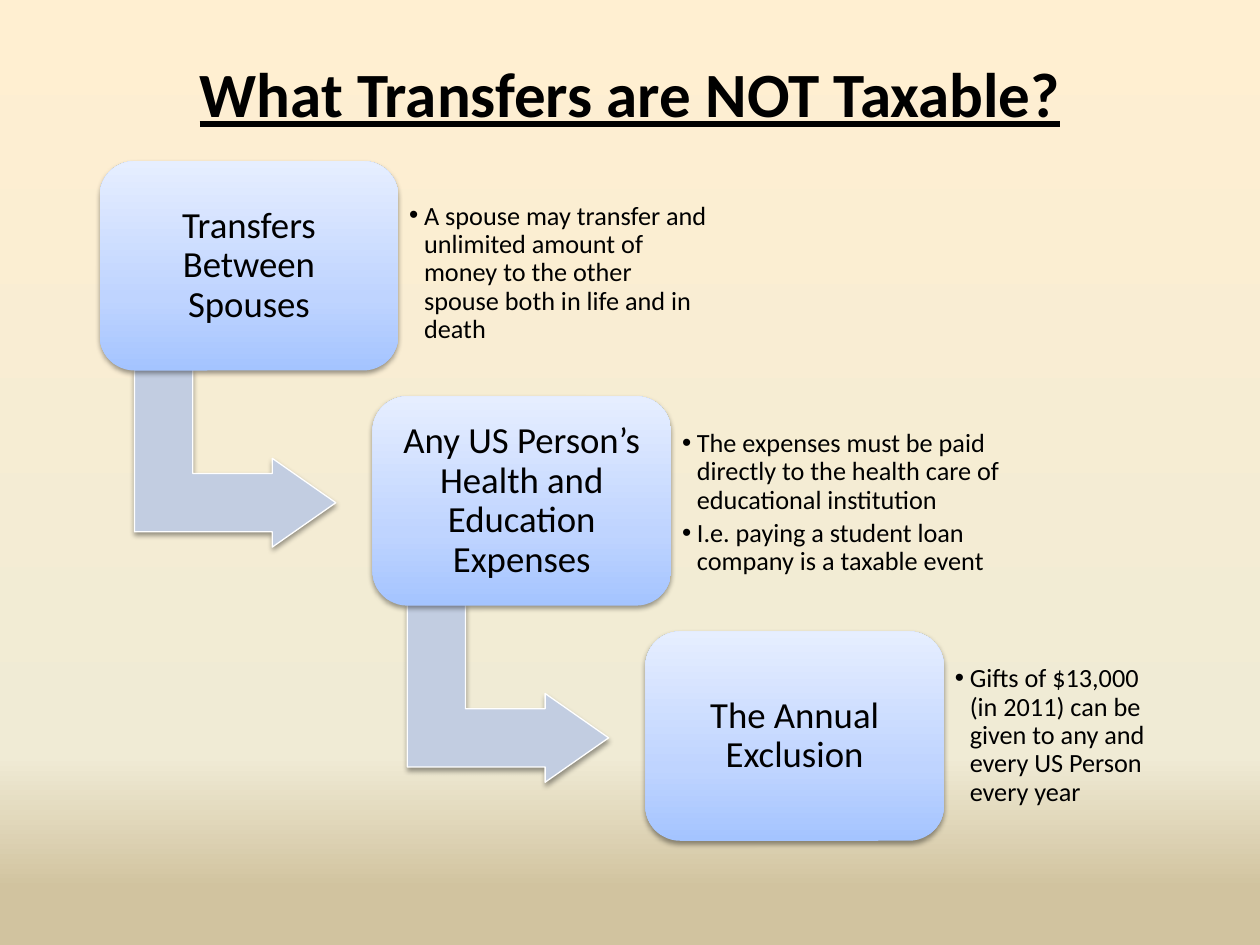
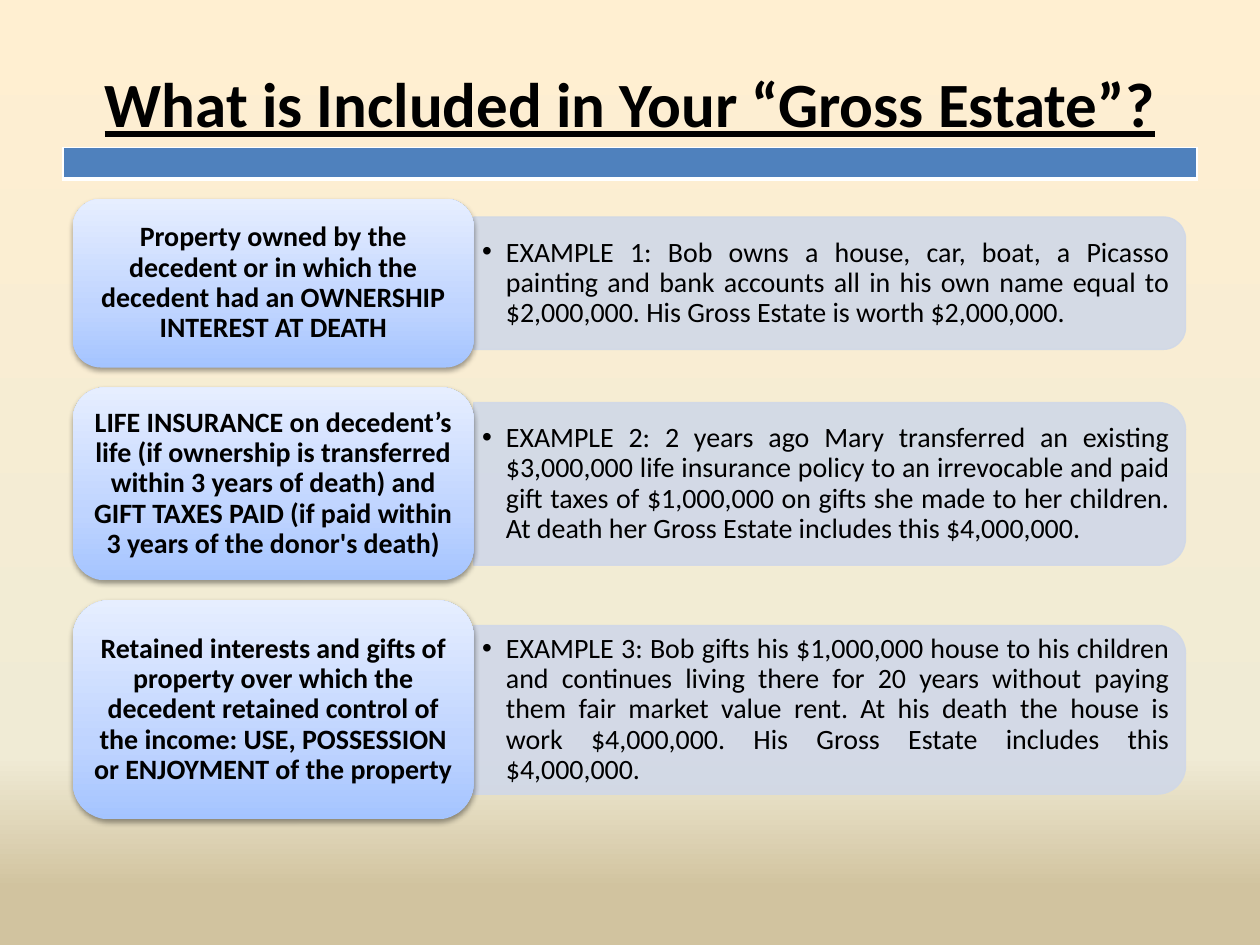
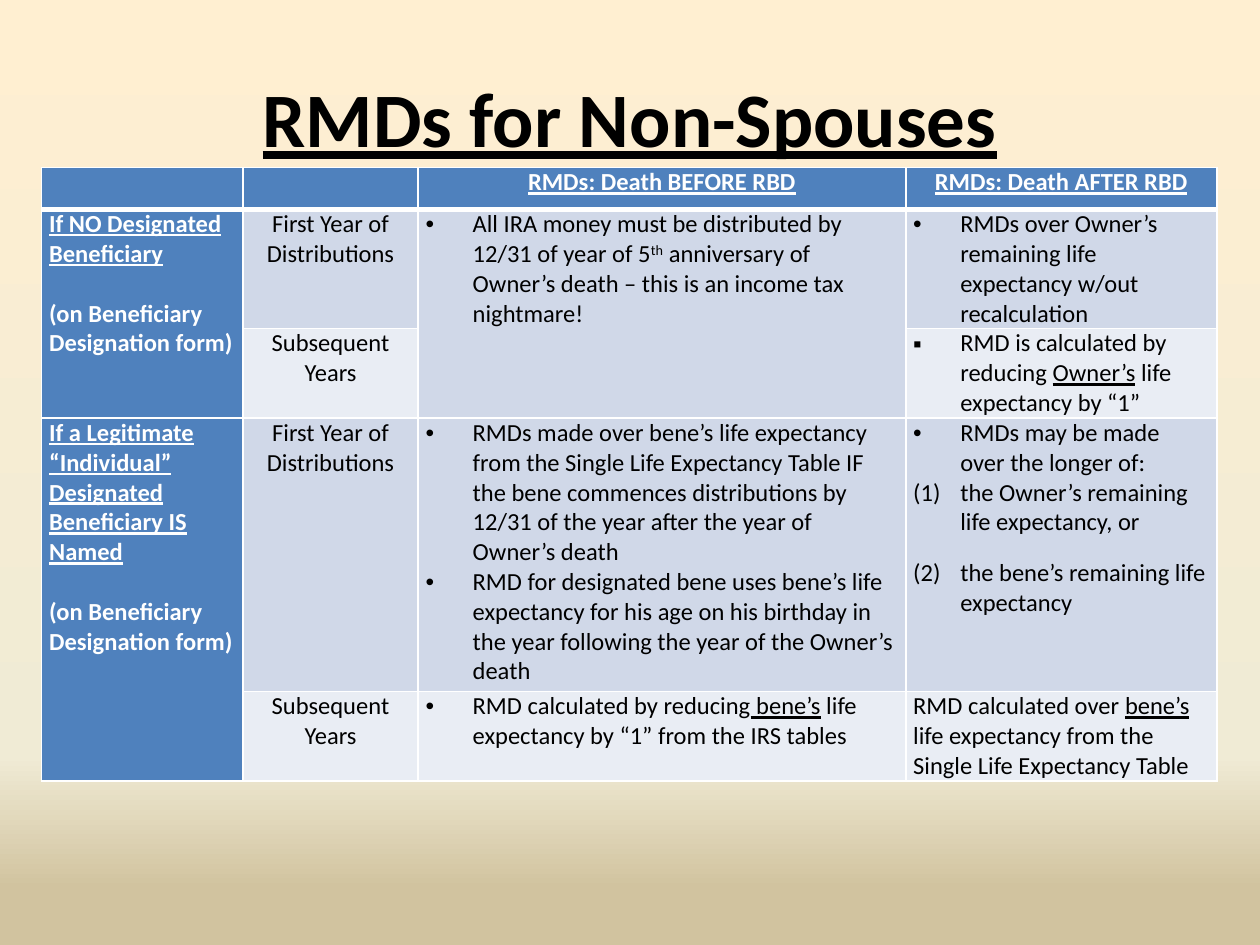
from lxml import etree
from pptx import Presentation
from pptx.dml.color import RGBColor
from pptx.enum.shapes import MSO_SHAPE
from pptx.enum.text import MSO_ANCHOR, MSO_AUTO_SIZE, PP_ALIGN
from pptx.oxml.ns import qn
from pptx.util import Cm, Pt

ROUND = MSO_SHAPE.ROUNDED_RECTANGLE
PANEL = MSO_SHAPE.ROUND_2_SAME_RECTANGLE
BENT = MSO_SHAPE.BENT_UP_ARROW
MIDDLE, TOP = MSO_ANCHOR.MIDDLE, MSO_ANCHOR.TOP
FIXED = MSO_AUTO_SIZE.NONE
LEFT, CENTER, FULL = PP_ALIGN.LEFT, PP_ALIGN.CENTER, PP_ALIGN.JUSTIFY

BLACK, WHITE, BLUE = "000000", "FFFFFF", "4F81BD"
PALE, LIGHT, ARROW = "D0D8E8", "E9EDF4", "C2CDE1"
SAND = [(0, "FFEFD1"), (80, "F0EBD5"), (94, "D1C39F")]
SKY = [(0, "A4C4FF"), (35, "BFD4FF"), (100, "E6EEFF")]

DOT, SQUARE, NUMBER = "•", "▪", "(1)"
TIGHT = {"line_spacing": 0.9}
LIST = {**TIGHT, "space_after": Pt(2.7)}


def rgb(code):
    return RGBColor.from_string(code)


def add(host, tag, **attrs):
    """Append a DrawingML element."""
    return etree.SubElement(host, qn("a:" + tag), {k: str(v) for k, v in attrs.items()})


def put(item, values):
    for name, value in values.items():
        setattr(item, name, value)


def blend(fill, host, stops, angle):
    """Fill with a gradient of any number of stops."""
    fill.gradient()
    fill.gradient_angle = angle
    group = host.find(".//" + qn("a:gsLst"))
    for stop in list(group):
        group.remove(stop)
    for place, code in stops:
        add(add(group, "gs", pos=place * 1000), "srgbClr", val=code)


def shade(shape):
    effect = add(shape.element.spPr, "effectLst")
    cast = add(effect, "outerShdw", blurRad=40000, dist=20000, dir=5400000, rotWithShape=0)
    add(add(cast, "srgbClr", val=BLACK), "alpha", val=38000)


def mark(para, sign, indent):
    """Give a paragraph a hanging bullet or number."""
    props = para._p.get_or_add_pPr()
    props.set("marL", str(Cm(indent)))
    props.set("indent", str(-Cm(indent)))
    if sign == NUMBER:
        add(props, "buAutoNum", type="arabicParenBoth")
    else:
        add(props, "buFont", typeface="Arial")
        add(props, "buChar", char=sign)


class Deck:
    font = "Calibri"

    def __init__(self):
        self.show = Presentation()
        put(self.show, {"slide_width": Cm(25.4), "slide_height": Cm(19.05)})
        master = self.show.slide_master
        blend(master.background.fill, master.element, SAND, 270)

    def page(self, title, height, size=36):
        self.slide = self.show.slides.add_slide(self.show.slide_layouts[5])
        head = self.slide.shapes.title
        put(head, {"left": Cm(1.27), "top": Cm(0.76),
                   "width": Cm(22.86), "height": Cm(height)})
        put(head.text_frame, {"auto_size": FIXED, "vertical_anchor": MIDDLE, "word_wrap": True})
        self.say(head.text_frame, [title], size, {"alignment": CENTER},
                 bold=True, underline=True)

    def say(self, frame, items, size, form, ink=BLACK, sign=None, indent=0.95, **face):
        """Set paragraphs: a text, or a text with its own settings.

        Every second piece between bars takes the "odd" style.
        """
        for index, item in enumerate(items):
            text, own = (item, {}) if isinstance(item, str) else item
            para = frame.add_paragraph() if index else frame.paragraphs[0]
            put(para, {**form, **own.get("form", {})})
            bullet = own.get("sign", sign)
            if bullet:
                mark(para, bullet, indent)
            for turn, piece in enumerate(text.split("|")):
                run = para.add_run()
                run.text = piece
                put(run.font, {"name": self.font, "size": Pt(size), **face, **own.get("face", {})})
                run.font.color.rgb = rgb(ink)
                if turn % 2 and own.get("odd") == "raise":
                    run.font._element.set("baseline", "30000")
                elif turn % 2:
                    run.font.underline = True

    def pad(self, frame, side, edge):
        put(frame, {"margin_left": Cm(side), "margin_right": Cm(side),
                    "margin_top": Cm(edge), "margin_bottom": Cm(edge),
                    "word_wrap": True, "auto_size": FIXED, "vertical_anchor": MIDDLE})

    def shape(self, kind, x, y, w, h, turn=0):
        item = self.slide.shapes.add_shape(kind, Cm(x), Cm(y), Cm(w), Cm(h))
        item.rotation = turn
        return item

    def card(self, x, y, w, h, text, size, side, edge, **face):
        item = self.shape(ROUND, x, y, w, h)
        blend(item.fill, item.element, SKY, 90)
        item.line.fill.background()
        shade(item)
        self.pad(item.text_frame, side, edge)
        self.say(item.text_frame, [text], size, {**TIGHT, "alignment": CENTER}, **face)

    def arrow(self, x, y):
        item = self.shape(BENT, x, y, 3.58, 4.06, 90)
        for index, value in enumerate((0.328, 0.25, 0.358)):
            item.adjustments[index] = value
        self.paint(item, ARROW, WHITE)
        shade(item)

    def paint(self, item, fill, line):
        item.fill.solid()
        item.fill.fore_color.rgb = rgb(fill)
        item.line.color.rgb = rgb(line)
        item.line.width = Pt(0.75)

    def panel(self, x, mid, w, h):
        """Draw a bar rounded on its right, centred on the height mid."""
        item = self.shape(PANEL, x + (w - h) / 2, mid - w / 2, h, w, 90)
        self.paint(item, PALE, PALE)
        item.shadow.inherit = False
        for color in item.element.spPr.iter(qn("a:srgbClr")):
            add(color, "alpha", val=90000)

    def notes(self, x, y, w, h, items, size, side, edge, indent, align=LEFT):
        frame = self.slide.shapes.add_textbox(Cm(x), Cm(y), Cm(w), Cm(h)).text_frame
        self.pad(frame, side, edge)
        self.say(frame, items, size, {**LIST, "alignment": align}, sign=DOT, indent=indent)

    def table(self, x, y, cols, rows):
        grid = self.slide.shapes.add_table(len(rows), len(cols), Cm(x), Cm(y),
                                           Cm(sum(cols)), Cm(sum(rows))).table
        for col, width in zip(grid.columns, cols):
            col.width = Cm(width)
        for row, height in zip(grid.rows, rows):
            row.height = Cm(height)
        return grid

    def cell(self, cell, fill, items=(), base=1, size=14, form=None, **style):
        """Style a cell; base is the width of its bottom border."""
        props = cell._tc.get_or_add_tcPr()
        for side in "LRTB":
            line = add(props, "ln" + side, w=Pt(base if side == "B" else 1))
            add(add(line, "solidFill"), "srgbClr", val=WHITE)
        cell.fill.solid()
        cell.fill.fore_color.rgb = rgb(fill)
        put(cell, {"margin_left": Cm(0.15), "margin_right": Cm(0.15), "margin_top": 0,
                   "margin_bottom": 0, "vertical_anchor": TOP})
        if items:
            self.say(cell.text_frame, items, size, form or {}, **style)
        else:
            add(cell.text_frame.paragraphs[0]._p, "endParaRPr", sz=size * 100)


def gifts(deck):
    deck.page("What Transfers are NOT Taxable?", 2.21)
    steps = [
        ("Transfers Between Spouses", 0.56, 6.5,
         ["A spouse may transfer and unlimited amount of money to the other spouse "
          "both in life and in death"]),
        ("Any US Person’s Health and Education Expenses", 0.45, 7.52,
         ["The expenses must be paid directly to the health care of educational institution",
          "I.e. paying a student loan company is a taxable event"]),
        ("The Annual Exclusion", 0.41, 4.37,
         ["Gifts of $13,000 (in 2011) can be given to any and every US Person every year"]),
    ]
    for index, (name, drop, width, items) in enumerate(steps):
        x, y = 2.01 + 5.5 * index, 3.25 + 4.74 * index
        if index < len(steps) - 1:
            deck.arrow(x + 0.94, y + 3.96)
        deck.card(x, y, 6.02, 4.22, name, 21, 0.23, 0.23)
        deck.notes(x + 6.04, y + drop, width, 3.4, items, 15, 0.2, 0.2, 0.3)


def estate(deck):
    deck.page("What is Included in Your “Gross Estate”?", 2.62)
    bar = deck.table(1.27, 2.97, [22.86], [0.64])
    deck.cell(bar.cell(0, 0), BLUE, base=3, size=8)
    rows = [
        (3.4, 2.67, "Property owned by the decedent or in which the decedent had an "
         "OWNERSHIP INTEREST AT DEATH",
         "EXAMPLE 1: Bob owns a house, car, boat, a Picasso painting and bank accounts all in "
         "his own name equal to $2,000,000. His Gross Estate is worth $2,000,000."),
        (3.89, 3.28, "LIFE INSURANCE on decedent’s life (if ownership is transferred within "
         "3 years of death) and GIFT TAXES PAID (if paid within 3 years of the donor's death)",
         "EXAMPLE 2: 2 years ago Mary transferred an existing $3,000,000 life insurance policy "
         "to an irrevocable and paid gift taxes of $1,000,000 on gifts she made to her "
         "children. At death her Gross Estate includes this $4,000,000."),
        (4.42, 3.4, "Retained interests and gifts of property over which the decedent retained "
         "control of the income: USE, POSSESSION or ENJOYMENT of the property",
         "EXAMPLE 3: Bob gifts his $1,000,000 house to his children and continues living there "
         "for 20 years without paying them fair market value rent. At his death the house is "
         "work $4,000,000. His Gross Estate includes this $4,000,000."),
    ]
    y = 4.01
    for tall, high, name, case in rows:
        mid, inner = y + tall / 2, high - 0.3
        deck.panel(9.55, mid, 14.35, high)
        deck.notes(9.55, mid - inner / 2, 14.2, inner, [case], 16, 0.17, 0.08, 0.48, FULL)
        deck.card(1.47, y, 8.08, tall, name, 16, 0.17, 0.08, bold=True)
        y += tall + 0.4


def payouts(deck):
    deck.page("RMDs for Non-Spouses", 3.18, 44)
    form = ("(on Beneficiary Designation form)",
            {"form": {"space_before": Pt(17)}, "face": {"underline": False}})
    first, later = ["First Year of Distributions"], ["Subsequent Years"]
    data = [
        [[], [], ["RMDs: Death BEFORE RBD"], ["RMDs: Death AFTER RBD"]],
        [["If NO Designated Beneficiary", form], first,
         [("All IRA money must be distributed by 12/31 of year of 5|th| anniversary of "
           "Owner’s death – this is an income tax nightmare!", {"odd": "raise"})],
         ["RMDs over Owner’s remaining life expectancy w/out recalculation"]],
        [[], later, [],
         [("RMD is calculated by reducing |Owner’s| life expectancy by “1”",
           {"sign": SQUARE})]],
        [["If a Legitimate “Individual” Designated Beneficiary IS Named", form], first,
         ["RMDs made over bene’s life expectancy from the Single Life Expectancy Table IF the "
          "bene commences distributions by 12/31 of the year after the year of Owner’s death",
          "RMD for designated bene uses bene’s life expectancy for his age on his birthday in "
          "the year following the year of the Owner’s death"],
         ["RMDs may be made over the longer of:",
          ("the Owner’s remaining life expectancy, or", {"sign": NUMBER}),
          ("the bene’s remaining life expectancy",
           {"sign": NUMBER, "form": {"space_before": Pt(12), "space_after": Pt(12)}})]],
        [[], later,
         ["RMD calculated by reducing| bene’s| life expectancy by “1” from the IRS tables"],
         [("RMD calculated over |bene’s| life expectancy from the Single Life Expectancy Table",
           {"sign": None})]],
    ]
    grid = deck.table(0.84, 3.38, [4.06, 3.53, 9.83, 6.27], [0.84, 2.39, 1.8, 5.51, 1.8])
    for top, col in ((1, 0), (1, 2), (3, 0)):
        grid.cell(top, col).merge(grid.cell(top + 1, col))
    strong = {"ink": WHITE, "bold": True, "underline": True}
    middle = {"form": {"alignment": CENTER}}
    for r, row in enumerate(data):
        for c, items in enumerate(row):
            fill = BLUE if r == 0 or c == 0 else PALE if r % 2 else LIGHT
            if r == 0:
                style = {**strong, **middle, "base": 3}
            elif c == 0:
                style = strong
            else:
                style = middle if c == 1 else {"sign": DOT}
            deck.cell(grid.cell(r, c), fill, items, **style)


def main():
    deck = Deck()
    for build in (gifts, estate, payouts):
        build(deck)
    deck.show.save("out.pptx")


if __name__ == "__main__":
    main()
